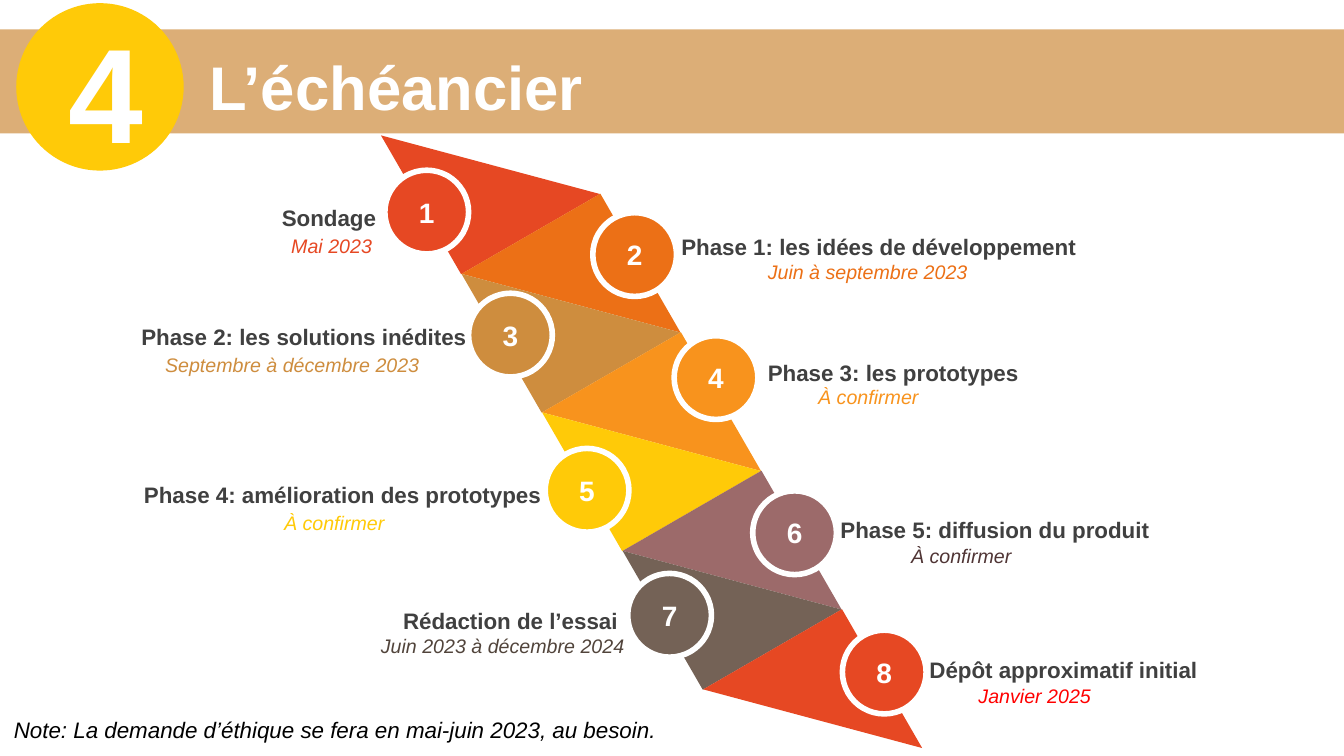
from pptx import Presentation
from pptx import util as u
from pptx.dml.color import RGBColor
from pptx.enum import shapes, text
from pptx.oxml.ns import qn
from lxml import etree

Cm, Pt = u.Cm, u.Pt
Align = text.PP_ALIGN
Kind = shapes.MSO_SHAPE

WHITE = RGBColor(0xFF, 0xFF, 0xFF)
BLACK = RGBColor(0x00, 0x00, 0x00)
GREY = RGBColor(0x40, 0x40, 0x40)
VERMILION = RGBColor(0xE6, 0x48, 0x23)
ORANGE = RGBColor(0xEC, 0x70, 0x16)
TAN = RGBColor(0xCE, 0x8D, 0x3E)
AMBER = RGBColor(0xF8, 0x93, 0x1D)
YELLOW = RGBColor(0xFF, 0xCA, 0x08)
MAUVE = RGBColor(0x9C, 0x6A, 0x6A)
BROWN = RGBColor(0x74, 0x62, 0x56)
DARK_MAUVE = RGBColor(0x4F, 0x34, 0x34)
DARK_BROWN = RGBColor(0x51, 0x44, 0x3B)
RED = RGBColor(0xFF, 0x00, 0x00)

# Ribbon of triangles: each pair shifts by one step
TRIANGLE_SIDE = 4.04
RIBBON_LEFT, RIBBON_TOP = 10.34, 2.13
STEP_X, STEP_Y = 2.03, 3.49
CIRCLE_SIZE = 2.11

# Fill, circle (left, top), label, label (left, top, width), label alignment,
# date, date (left, top), date colour
PHASES = [
    (VERMILION, (9.7, 4.29), "Sondage", (0.58, 5, 9.15), Align.RIGHT,
     "Mai 2023", (7.09, 5.77), VERMILION),
    (ORANGE, (14.94, 5.36), "Phase 1: les idées de développement",
     (16.92, 5.74, 11.61), Align.LEFT,
     "Juin à septembre 2023", (19.1, 6.43), ORANGE),
    (TAN, (11.81, 7.39), "Phase 2: les solutions inédites",
     (2.74, 8, 9.27), Align.RIGHT,
     "Septembre à décembre 2023", (3.91, 8.76), TAN),
    (AMBER, (16.99, 8.46), "Phase 3: les prototypes",
     (19.1, 8.92, 8.59), Align.LEFT, "À confirmer", (20.37, 9.58), AMBER),
    (YELLOW, (13.74, 11.3), "Phase 4: amélioration des prototypes",
     (3.3, 11.99, 10.59), Align.RIGHT, "À confirmer", (6.91, 12.75), YELLOW),
    (MAUVE, (18.97, 12.37), "Phase 5: diffusion du produit",
     (20.93, 12.88, 8.59), Align.LEFT,
     "À confirmer", (22.71, 13.59), DARK_MAUVE),
    (BROWN, (15.82, 14.45), "Rédaction de l’essai",
     (6.55, 15.16, 9.27), Align.RIGHT,
     "Juin 2023 à décembre 2024", (9.35, 15.85), DARK_BROWN),
    (VERMILION, (21.23, 15.88), "Dépôt approximatif initial",
     (22.94, 16.41, 7.49), Align.RIGHT,
     "Janvier 2025", (24.41, 17.12), RED),
]


def write(box, words, size, color, align=Align.LEFT, bold=False, italic=False,
          anchor=text.MSO_ANCHOR.MIDDLE):
    frame = box.text_frame
    frame.text = words
    frame.word_wrap = True
    frame.auto_size = text.MSO_AUTO_SIZE.NONE
    frame.vertical_anchor = anchor
    para = frame.paragraphs[0]
    para.alignment = align
    font = para.font
    font.name, font.size = "Arial", Pt(size)
    font.bold, font.italic = bold, italic
    font.color.rgb = color


def add_text(page, left, top, width, height, *args, **style):
    box = page.shapes.add_textbox(Cm(left), Cm(top), Cm(width), Cm(height))
    write(box, *args, **style)


def add_block(page, kind, left, top, width, height, color):
    block = page.shapes.add_shape(kind, Cm(left), Cm(top), Cm(width), Cm(height))
    block.shadow.inherit = False
    block.fill.solid()
    block.fill.fore_color.rgb = color
    block.line.fill.background()
    return block


def add_triangle(page, index, color):
    step = (index + 1) // 2
    triangle = add_block(page, Kind.RIGHT_TRIANGLE,
                         RIBBON_LEFT + step * STEP_X, RIBBON_TOP + step * STEP_Y,
                         TRIANGLE_SIDE, TRIANGLE_SIDE, color)
    triangle.rotation = 150 if index % 2 else 330


def add_numbered_circle(page, number, left, top, color):
    circle = add_block(page, Kind.OVAL, left, top, CIRCLE_SIZE, CIRCLE_SIZE, color)
    circle.line.color.rgb = WHITE
    circle.line.width = Pt(4)
    frame = circle.text_frame
    frame.margin_left = frame.margin_right = 0
    frame.margin_top = frame.margin_bottom = 0
    write(circle, str(number), 20, WHITE, Align.CENTER, bold=True)


def add_header(page):
    band = add_block(page, Kind.RECTANGLE, 0, 0.74, 33.87, 2.62, TAN)
    fill_color = band.fill._xPr.find(qn("a:solidFill"))[0]
    etree.SubElement(fill_color, qn("a:alpha")).set("val", "70000")

    title = page.shapes.title
    title.left, title.top = Cm(5.03), Cm(1.1)
    title.width, title.height = Cm(11.48), Cm(2.13)
    write(title, "L’échéancier", 44, WHITE, bold=True)
    page.shapes._spTree.append(title._element)  # in front of the band

    add_block(page, Kind.OVAL, 0.41, 0.08, 4.22, 4.22, YELLOW)
    add_text(page, 0.55, 0.05, 4.22, 4.4, "4", 96, WHITE, Align.CENTER, bold=True)


def main():
    deck = Presentation()
    deck.slide_width, deck.slide_height = Cm(33.87), Cm(19.05)
    page = deck.slides.add_slide(deck.slide_layouts[5])

    add_header(page)

    # Ribbon
    for index, phase in enumerate(PHASES):
        add_triangle(page, index, phase[0])

    # Phases
    for number, phase in enumerate(PHASES, 1):
        color, circle, label, label_at, align, date, date_at, date_color = phase
        add_numbered_circle(page, number, *circle, color)
        add_text(page, *label_at, 0.94, label, 16, GREY, align, bold=True)
        add_text(page, *date_at, 7.32, 0.86, date, 14, date_color, italic=True,
                 anchor=text.MSO_ANCHOR.TOP)

    # Note
    add_text(page, 0.1, 17.93, 19.18, 0.94,
             "Note: La demande d’éthique se fera en mai-juin 2023, au besoin.",
             16, BLACK, italic=True, anchor=text.MSO_ANCHOR.TOP)

    deck.save("out.pptx")


if __name__ == "__main__":
    main()
